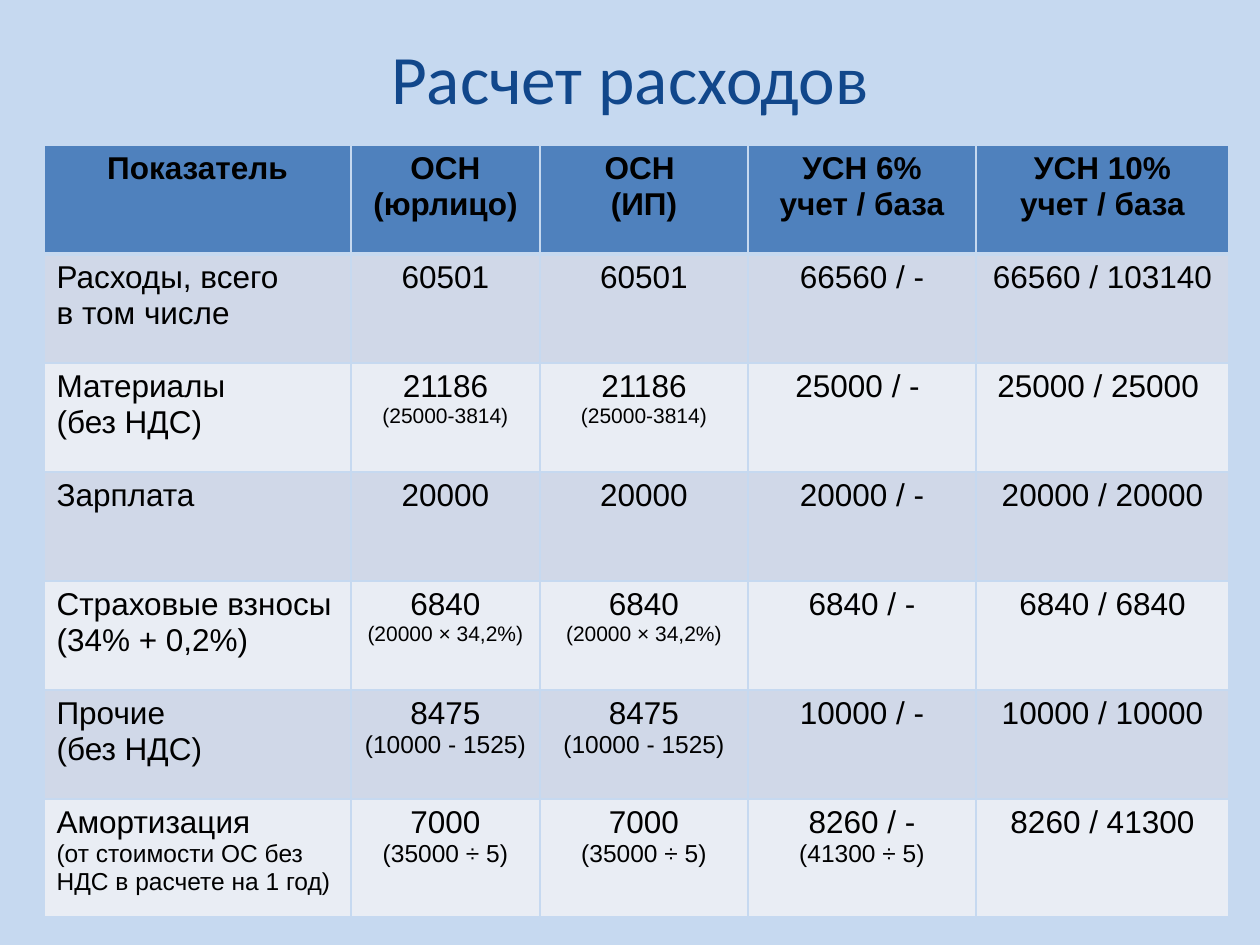
from dataclasses import dataclass

from pptx import Presentation
from pptx.dml.color import RGBColor
from pptx.enum.text import MSO_ANCHOR, PP_ALIGN
from pptx.oxml import parse_xml
from pptx.oxml.ns import nsdecls
from pptx.table import Table, _Cell
from pptx.text.text import TextFrame
from pptx.util import Emu, Pt

SCALE = 914400 / 126
BACK, HEAD, BANDS = "C6D9F0", "4F81BD", ("D0D8E8", "E9EDF4")
BLACK, NAVY = "000000", "11478B"
COLS = (307, 189, 208, 228, 253)
HIGH, LAST = 109, 118


@dataclass(frozen=True)
class Row:
    """Cell texts of a row, with the point sizes of second lines."""
    cells: tuple[str, ...]
    note: int = 18
    label: int = 18


ROWS = (
    Row(("Показатель", "ОСН (юрлицо)", "ОСН \n(ИП)",
         "УСН 6%\nучет / база", "УСН 10%\nучет / база")),
    Row(("Расходы, всего\nв том числе", "60501", "60501",
         "66560 / -", "66560 / 103140")),
    Row(("Материалы\n(без НДС)", "21186\n(25000-3814)", "21186\n(25000-3814)",
         "25000 / - ", "25000 / 25000 "), note=12),
    Row(("Зарплата", "20000", "20000", "20000 / -", "20000 / 20000")),
    Row(("Страховые взносы (34% + 0,2%)", "6840\n(20000 × 34,2%)",
         "6840\n(20000 × 34,2%)", "6840 / -", "6840 / 6840"), note=12),
    Row(("Прочие\n(без НДС)", "8475\n(10000 - 1525)", "8475\n(10000 - 1525)",
         "10000 / -", "10000 / 10000"), note=14),
    Row(("Амортизация\n(от стоимости ОС без НДС в расчете на 1 год)",
         "7000\n(35000 ÷ 5)", "7000\n(35000 ÷ 5)",
         "8260 / -\n(41300 ÷ 5)", "8260 / 41300"), note=14, label=14),
)


def px(num: int) -> Emu:
    return Emu(round(num * SCALE))


def color(code: str) -> RGBColor:
    return RGBColor.from_string(code)


def write(frame: TextFrame, text: str, *, size: float = 18, note: float = 18,
          font: str = "Arial", ink: str = BLACK, bold: bool = False,
          align: PP_ALIGN = PP_ALIGN.CENTER) -> None:
    """Put each line in its own paragraph; lines after the first use note."""
    frame.word_wrap = True
    for num, line in enumerate(text.split("\n")):
        para = frame.add_paragraph() if num else frame.paragraphs[0]
        para.alignment = align
        run = para.add_run()
        run.text = line
        run.font.size = Pt(note if num else size)
        run.font.name = font
        run.font.bold = bold
        run.font.color.rgb = color(ink)


def border(cell: _Cell, top: int, bottom: int) -> None:
    """Line all four sides; top and bottom are widths in points."""
    props = cell._tc.get_or_add_tcPr()
    for side, width in (("L", 1), ("R", 1), ("T", top), ("B", bottom)):
        props.append(parse_xml(
            f'<a:ln{side} {nsdecls("a")} w="{Pt(width)}"><a:solidFill>'
            f'<a:srgbClr val="{BACK}"/></a:solidFill></a:ln{side}>'))


def fill_row(table: Table, num: int, row: Row) -> None:
    head = num == 0
    table.rows[num].height = px(LAST if num == len(ROWS) - 1 else HIGH)
    for col, text in enumerate(row.cells):
        cell = table.cell(num, col)
        border(cell, top=3 if num == 1 else 1, bottom=3 if head else 1)
        cell.fill.solid()
        cell.fill.fore_color.rgb = color(HEAD if head else BANDS[(num - 1) % 2])
        left = col == 0 and not head
        write(cell.text_frame, text, bold=head,
              note=row.note if col else row.label,
              align=PP_ALIGN.LEFT if left else PP_ALIGN.CENTER)


def main() -> None:
    deck = Presentation()
    deck.slide_width, deck.slide_height = px(1260), px(945)
    slide = deck.slides.add_slide(deck.slide_layouts[6])
    slide.background.fill.solid()
    slide.background.fill.fore_color.rgb = color(BACK)

    title = slide.shapes.add_textbox(px(63), px(38), px(1134), px(77)).text_frame
    title.vertical_anchor = MSO_ANCHOR.MIDDLE
    write(title, "Расчет расходов", size=39.6, font="Calibri", ink=NAVY)

    high = HIGH * (len(ROWS) - 1) + LAST
    table = slide.shapes.add_table(len(ROWS), len(COLS), px(44), px(145),
                                   px(sum(COLS)), px(high)).table
    for col, width in zip(table.columns, COLS):
        col.width = px(width)
    for num, row in enumerate(ROWS):
        fill_row(table, num, row)
    deck.save("out.pptx")


if __name__ == "__main__":
    main()
